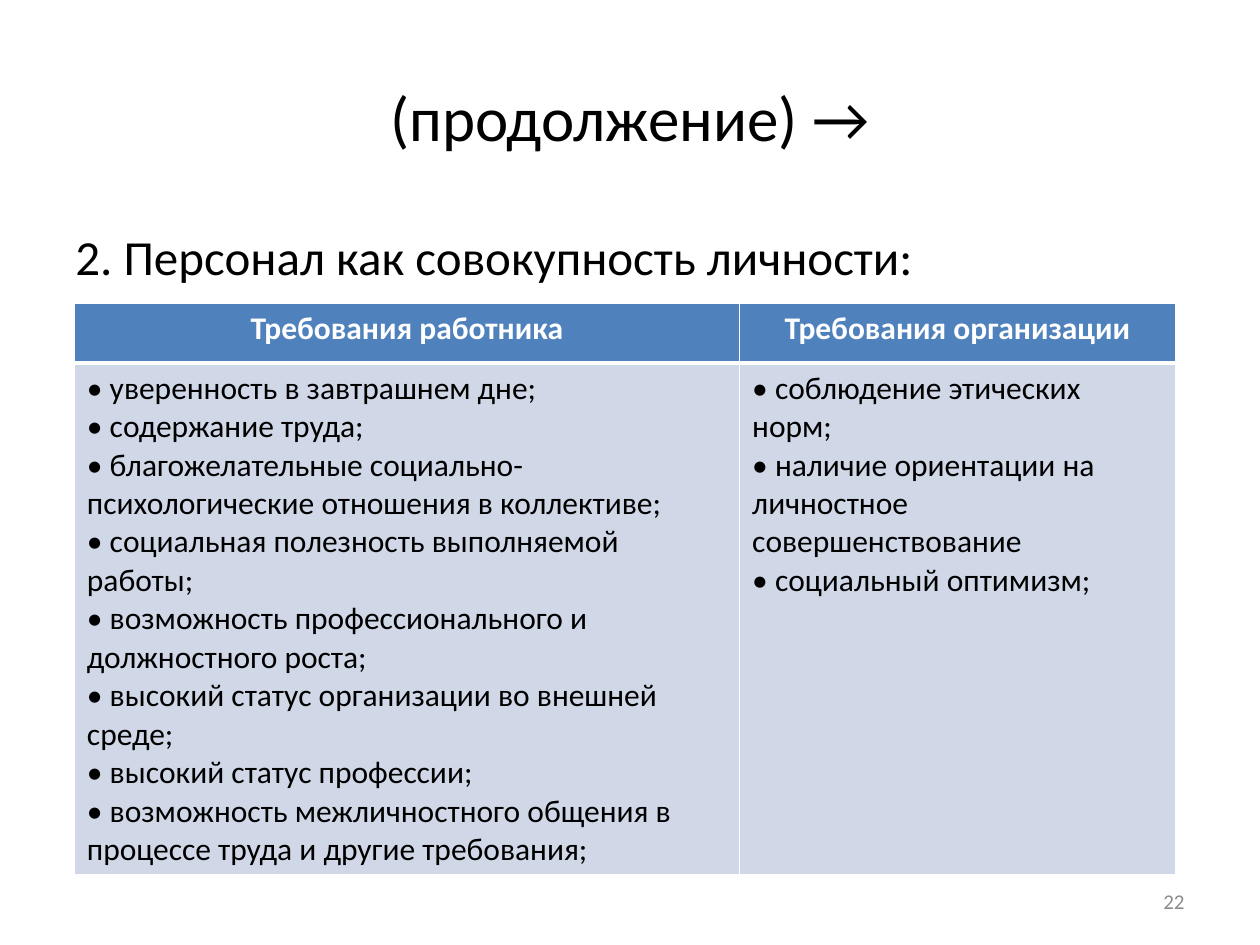
from dataclasses import dataclass

import pptx
import pptx.dml.color
import pptx.enum.text
import pptx.oxml.ns
import pptx.util
from lxml import etree

Inches = pptx.util.Inches
Align = pptx.enum.text.PP_ALIGN
Anchor = pptx.enum.text.MSO_ANCHOR


@dataclass(frozen=True)
class Theme:
    font: str = "Calibri"
    ink: str = "000000"
    white: str = "FFFFFF"
    muted: str = "8C8C8C"
    header_fill: str = "4F81BD"
    body_fill: str = "D0D8E8"
    title_size: int = 36
    lead_size: int = 28
    table_size: int = 18
    number_size: int = 12


THEME = Theme()
HEADERS = ["Требования работника", "Требования организации"]
REQUIREMENTS = [
    [
        "• уверенность в завтрашнем дне;",
        "• содержание труда;",
        "• благожелательные социально-психологические отношения в коллективе;",
        "• социальная полезность выполняемой работы;",
        "• возможность профессионального и должностного роста;",
        "• высокий статус организации во внешней среде;",
        "• высокий статус профессии;",
        "• возможность межличностного общения в процессе труда и другие требования;",
    ],
    [
        "• соблюдение этических норм;",
        "• наличие ориентации на личностное совершенствование",
        "• социальный оптимизм;",
    ],
]
COLUMN_WIDTHS = [5.28, 3.46]
ROW_HEIGHTS = [0.47, 4.06]


def fill_text(tf, lines, size, color, align=Align.LEFT, bold=False):
    for i, line in enumerate(lines):
        p = tf.paragraphs[0] if i == 0 else tf.add_paragraph()
        p.text = line
        p.alignment = align
        p.font.name = THEME.font
        p.font.size = pptx.util.Pt(size)
        p.font.bold = bold
        p.font.color.rgb = pptx.dml.color.RGBColor.from_string(color)


def add_text(slide, box, text, size, color, align=Align.LEFT, anchor=Anchor.MIDDLE):
    tf = slide.shapes.add_textbox(*map(Inches, box)).text_frame
    tf.word_wrap = True
    tf.vertical_anchor = anchor
    fill_text(tf, [text], size, color, align)


def set_borders(cell, **widths):
    """Draw white cell borders, widths in points, keyed by side L, R, T, B."""
    qn = pptx.oxml.ns.qn
    props = cell._tc.get_or_add_tcPr()
    for i, (side, width) in enumerate(widths.items()):
        line = etree.Element(qn(f"a:ln{side}"), w=str(pptx.util.Pt(width)))
        fill = etree.SubElement(line, qn("a:solidFill"))
        etree.SubElement(fill, qn("a:srgbClr"), val=THEME.white)
        props.insert(i, line)


def style_cell(cell, fill, **widths):
    cell.fill.solid()
    cell.fill.fore_color.rgb = pptx.dml.color.RGBColor.from_string(fill)
    set_borders(cell, **widths)


def add_requirements_table(slide, left, top):
    table = slide.shapes.add_table(
        len(ROW_HEIGHTS), len(COLUMN_WIDTHS), Inches(left), Inches(top),
        Inches(sum(COLUMN_WIDTHS)), Inches(sum(ROW_HEIGHTS))).table
    for row, height in zip(table.rows, ROW_HEIGHTS):
        row.height = Inches(height)
    for i, (header, items) in enumerate(zip(HEADERS, REQUIREMENTS)):
        table.columns[i].width = Inches(COLUMN_WIDTHS[i])
        head, body = table.cell(0, i), table.cell(1, i)
        fill_text(head.text_frame, [header], THEME.table_size, THEME.white,
                  Align.CENTER, bold=True)
        style_cell(head, THEME.header_fill, L=1, R=1, T=1, B=3)
        fill_text(body.text_frame, items, THEME.table_size, THEME.ink)
        style_cell(body, THEME.body_fill, L=1, R=1, T=3, B=1)


def main():
    prs = pptx.Presentation()
    prs.slide_width, prs.slide_height = Inches(10), Inches(7.5)
    slide = prs.slides.add_slide(prs.slide_layouts[6])
    add_text(slide, (0.5, 0.3, 9, 1.25), "(продолжение) →",
             THEME.title_size, THEME.ink, Align.CENTER)
    add_text(slide, (0.5, 1.75, 9, 4.95), "2. Персонал как совокупность личности:",
             THEME.lead_size, THEME.ink, anchor=Anchor.TOP)
    add_text(slide, (7.17, 6.95, 2.33, 0.4), "22",
             THEME.number_size, THEME.muted, Align.RIGHT)
    add_requirements_table(slide, 0.59, 2.41)
    prs.save("out.pptx")


if __name__ == "__main__":
    main()
